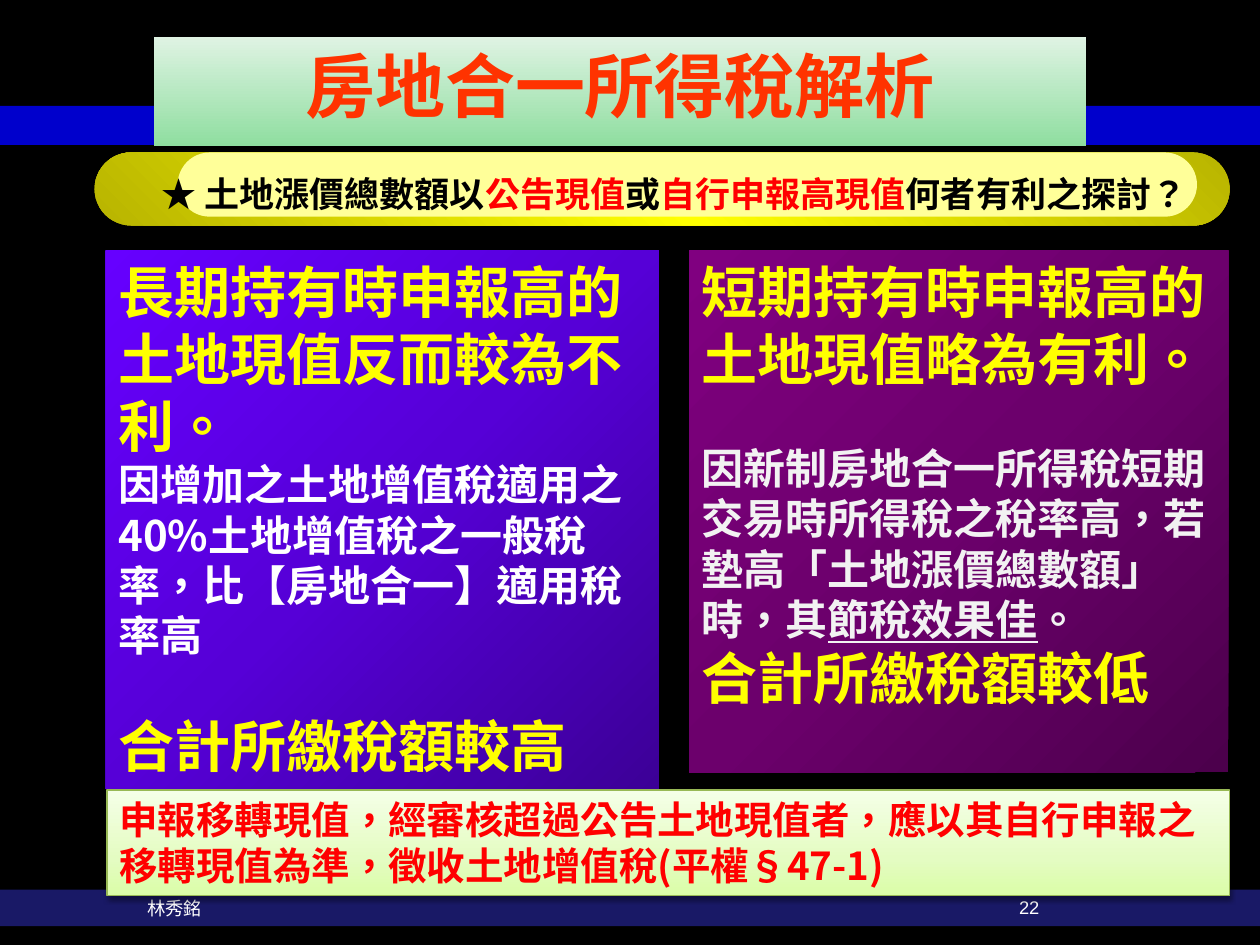
from dataclasses import dataclass

from lxml.etree import SubElement
from pptx import Presentation
from pptx.dml.color import RGBColor
from pptx.enum.shapes import MSO_SHAPE as Preset
from pptx.enum.text import MSO_ANCHOR as Anchor, MSO_AUTO_SIZE as AutoSize, PP_ALIGN as Align
from pptx.oxml import parse_xml
from pptx.oxml.ns import nsdecls, qn
from pptx.util import Inches, Pt

CJK = "Noto Sans CJK SC"
COLORS = {
    "black": "000000", "white": "FFFFFF", "soft": "F2F2F2", "yellow": "FFFF00",
    "red": "FF0000", "orange": "FF3300", "band": "0000CC", "footer": "191966",
    "cream": "FFFF99", "border": "98B955",
}
GRADIENTS = {
    "title": (90, [(0, "DFF3E3"), (100, "8FDEA0")]),
    "long": (225, [(0, "3C0097"), (50, "5600D7"), (100, "6600FF")]),
    "short": (225, [(0, "4C004C"), (50, "6C006C"), (100, "800080")]),
    "banner": (315, [(0, "B8B400"), (50, "FFFF00"), (100, "B8B400")]),
    "note": (270, [(0, "DAFDA7"), (35, "E4FCC2"), (100, "F5FFE7")]),
}


@dataclass(frozen=True)
class Box:
    left: float
    top: float
    width: float
    height: float

    def lengths(self) -> list:
        return [Inches(value) for value in (self.left, self.top, self.width, self.height)]


@dataclass(frozen=True)
class Span:
    text: str
    size: float
    color: str
    font: str = CJK
    bold: bool = True
    underline: bool = False


@dataclass(frozen=True)
class Line:
    spans: list
    before: float = 0


@dataclass(frozen=True)
class Column:
    box: Box
    gradient: str
    lines: list


def color(name: str) -> RGBColor:
    return RGBColor.from_string(COLORS[name])


def fill_shape(shape, name: str) -> None:
    if name in COLORS:
        shape.fill.solid()
        shape.fill.fore_color.rgb = color(name)
        return
    angle, stops = GRADIENTS[name]
    shape.fill.gradient()
    gradient = shape._element.spPr.find(qn("a:gradFill"))
    stop_list = gradient.find(qn("a:gsLst"))
    for stop in list(stop_list):
        stop_list.remove(stop)
    for position, value in stops:
        stop = SubElement(stop_list, qn("a:gs"), pos=str(position * 1000))
        SubElement(stop, qn("a:srgbClr"), val=value)
    shape.fill.gradient_angle = 360 - angle


def add_block(slide, preset, box: Box, fill: str):
    shape = slide.shapes.add_shape(preset, *box.lengths())
    shape.shadow.inherit = False
    shape.line.fill.background()
    if preset == Preset.ROUNDED_RECTANGLE:
        shape.adjustments[0] = 0.5
    fill_shape(shape, fill)
    return shape


def place(shape, box: Box) -> None:
    shape.left, shape.top, shape.width, shape.height = box.lengths()


def write_lines(shape, lines: list, align=Align.LEFT, anchor=Anchor.TOP) -> None:
    frame = shape.text_frame
    frame.word_wrap = True
    frame.auto_size = AutoSize.NONE
    frame.vertical_anchor = anchor
    for index, line in enumerate(lines):
        paragraph = frame.add_paragraph() if index else frame.paragraphs[0]
        paragraph.alignment = align
        paragraph.space_before = Pt(line.before)
        paragraph._p.get_or_add_pPr().set("hangingPunct", "0")
        for span in line.spans:
            run = paragraph.add_run()
            run.text = span.text
            run.font.size = Pt(span.size)
            run.font.bold = span.bold
            run.font.underline = span.underline
            run.font.color.rgb = color(span.color)
            run.font.name = span.font
            properties = run._r.get_or_add_rPr()
            properties.set("lang", "zh-TW")
            SubElement(properties, qn("a:ea"), typeface=CJK)


def remove_bullets(shape) -> None:
    for paragraph in shape.text_frame.paragraphs:
        properties = paragraph._p.get_or_add_pPr()
        properties.set("marL", "0")
        properties.set("indent", "0")
        SubElement(properties, qn("a:buNone"))


def add_note_shadow(shape) -> None:
    effects = shape._element.spPr.find(qn("a:effectLst"))
    effects.append(parse_xml(
        f'<a:outerShdw {nsdecls("a")} blurRad="{Pt(3.1)}" dist="{Pt(1.6)}" '
        f'dir="5400000" rotWithShape="0"><a:srgbClr val="{COLORS["black"]}">'
        '<a:alpha val="38000"/></a:srgbClr></a:outerShdw>'))


COLUMNS = [
    Column(Box(0.84, 1.99, 4.39, 4.27), "long", [
        Line([Span("長期持有時申報高的土地現值反而較為不利。", 32, "yellow")]),
        Line([Span("因增加之土地增值稅適用之40%土地增值稅之一般稅率，"
                   "比【房地合一】適用稅率高", 24, "white")]),
        Line([Span("合計所繳稅額較高", 32, "yellow")], before=29),
    ]),
    Column(Box(5.47, 1.99, 4.28, 4.14), "short", [
        Line([Span("短期持有時申報高的土地現值略為有利。", 32, "yellow")]),
        Line([Span("因新制房地合一所得稅短期交易時所得稅之稅率高，"
                   "若墊高「土地漲價總數額」時，其", 24, "soft"),
              Span("節稅效果佳", 24, "soft", underline=True),
              Span("。", 24, "soft")], before=29),
        Line([Span("合計所繳稅額較低", 32, "yellow")]),
    ]),
]
BANNER = Line([
    Span("★ ", 20, "black", font="Arial", bold=False),
    Span("土地漲價總數額以", 20, "black"),
    Span("公告現值", 20, "red"),
    Span("或", 20, "black"),
    Span("自行申報高現值", 20, "red"),
    Span("何者有利之探討？", 20, "black"),
])
NOTE = Line([Span("申報移轉現值，經審核超過公告土地現值者，應以其自行申報之移轉現值為準，"
                  "徵收土地增值稅(平權§47-1)", 22, "red")])


def footer_line(text: str) -> Line:
    return Line([Span(text, 10.5, "white", font="Arial", bold=False)])


def main() -> None:
    presentation = Presentation()
    presentation.slide_width, presentation.slide_height = Inches(10), Inches(7.5)
    slide = presentation.slides.add_slide(presentation.slide_layouts[3])
    slide.background.fill.solid()
    slide.background.fill.fore_color.rgb = color("black")

    band = add_block(slide, Preset.RECTANGLE, Box(0, 0.84, 10, 0.31), "band")
    slide.shapes._spTree.insert(2, band._element)

    title, *bodies = slide.placeholders
    place(title, Box(1.22, 0.29, 7.4, 0.87))
    fill_shape(title, "title")
    write_lines(title, [Line([Span("房地合一所得稅解析", 40, "orange")])], Align.CENTER)

    for body, column in zip(bodies, COLUMNS):
        place(body, column.box)
        fill_shape(body, column.gradient)
        write_lines(body, column.lines)
        remove_bullets(body)

    add_block(slide, Preset.ROUNDED_RECTANGLE, Box(0.75, 1.21, 9.01, 0.58), "banner")
    add_block(slide, Preset.ROUNDED_RECTANGLE, Box(1.41, 1.21, 8.09, 0.51), "cream")
    banner_text = slide.shapes.add_textbox(*Box(0.82, 1.32, 9.06, 0.45).lengths())
    write_lines(banner_text, [BANNER], Align.CENTER)

    footer = add_block(slide, Preset.RECTANGLE, Box(0, 7.06, 10, 0.29), "footer")
    footer.text_frame.margin_left = Inches(1.17)
    write_lines(footer, [footer_line("林秀銘")], anchor=Anchor.MIDDLE)
    page_number = slide.shapes.add_textbox(*Box(7.99, 7.06, 0.53, 0.26).lengths())
    write_lines(page_number, [footer_line("22")])

    note = add_block(slide, Preset.RECTANGLE, Box(0.85, 6.27, 8.91, 0.84), "note")
    note.line.color.rgb = color("border")
    note.line.width = Pt(0.75)
    add_note_shadow(note)
    write_lines(note, [NOTE])

    presentation.save("out.pptx")


if __name__ == "__main__":
    main()
